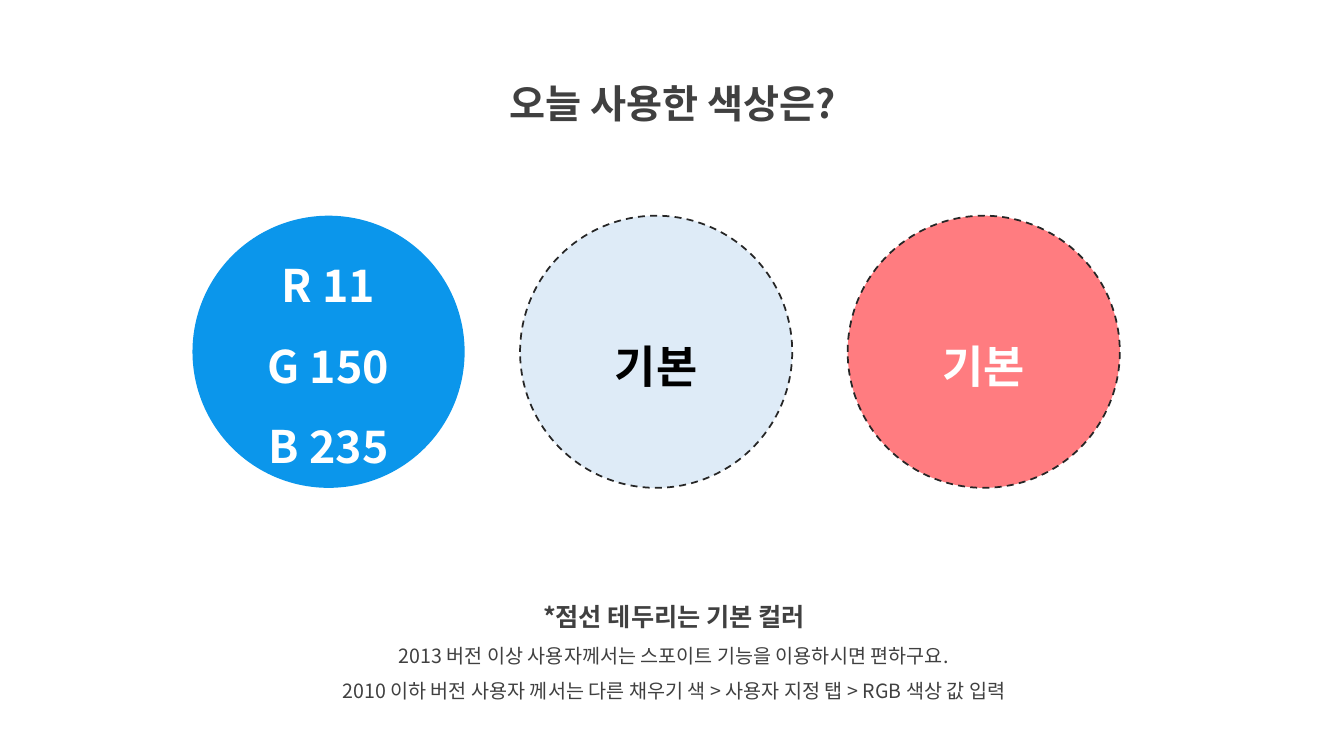
from lxml import etree
from pptx import Presentation
from pptx import util as u
from pptx.dml.color import RGBColor
from pptx.enum import dml, shapes, text
from pptx.oxml import ns

Pt = u.Pt
THEME = {
    "font": "Noto Sans CJK KR",
    "ink": "404040", "white": "FFFFFF", "black": "000000", "outline": "262626",
    "blue": "0B96EB", "pale": "DEEBF7", "coral": "FF7C80",
    "title": 28, "value": 32, "heading": 18, "body": 14,
}


def rgb(name):
    return RGBColor.from_string(THEME[name])


def write(tf, lines, color):
    tf.word_wrap = True
    for i, (line, size, bold) in enumerate(lines):
        p = tf.paragraphs[0] if i == 0 else tf.add_paragraph()
        p.alignment = text.PP_ALIGN.CENTER
        p.line_spacing = 1.5
        r = p.add_run()
        r.text = line
        font = {"name": THEME["font"], "size": Pt(THEME[size]), "bold": bold}
        for key, value in font.items():
            setattr(r.font, key, value)
        r.font.color.rgb = rgb(color)
        ea = etree.SubElement(r.font._element, ns.qn("a:ea"))
        ea.set("typeface", THEME["font"])


prs = Presentation()
prs.slide_width, prs.slide_height = Pt(960), Pt(540)
s = prs.slides.add_slide(prs.slide_layouts[6])

captions = [
    ((313.9, 36, 333.4, 51.8), [("오늘 사용한 색상은?", "title", True)]),
    ((193.7, 415.4, 575.3, 90.7), [
        ("*점선 테두리는 기본 컬러", "heading", True),
        ("2013 버전 이상 사용자께서는 스포이트 기능을 이용하시면 편하구요.", "body", False),
        ("2010 이하 버전 사용자 께서는 다른 채우기 색 > 사용자 지정 탭 > RGB 색상 값 입력", "body", False),
    ]),
]
for box, lines in captions:
    tf = s.shapes.add_textbox(*map(Pt, box)).text_frame
    write(tf, lines, "ink")
    tf.auto_size = text.MSO_AUTO_SIZE.SHAPE_TO_FIT_TEXT

LEFT, TOP, DIAMETER, PITCH = 137.5, 154.1, 194.4, 234
swatches = [
    ("blue", "white", ["R 11", "G 150", "B 235"], False),
    ("pale", "black", ["기본"], True),
    ("coral", "white", ["기본"], True),
]
for i, (fill, color, labels, dashed) in enumerate(swatches):
    sp = s.shapes.add_shape(shapes.MSO_SHAPE.OVAL, Pt(LEFT + i * PITCH), Pt(TOP),
                            Pt(DIAMETER), Pt(DIAMETER))
    sp.shadow.inherit = False
    sp.fill.solid()
    sp.fill.fore_color.rgb = rgb(fill)
    if dashed:
        sp.line.color.rgb = rgb("outline")
        sp.line.width = Pt(1.25)
        sp.line.dash_style = dml.MSO_LINE.DASH
    else:
        sp.line.fill.background()
    sp.text_frame.vertical_anchor = text.MSO_ANCHOR.MIDDLE
    write(sp.text_frame, [(label, "value", True) for label in labels], color)

prs.save("out.pptx")
